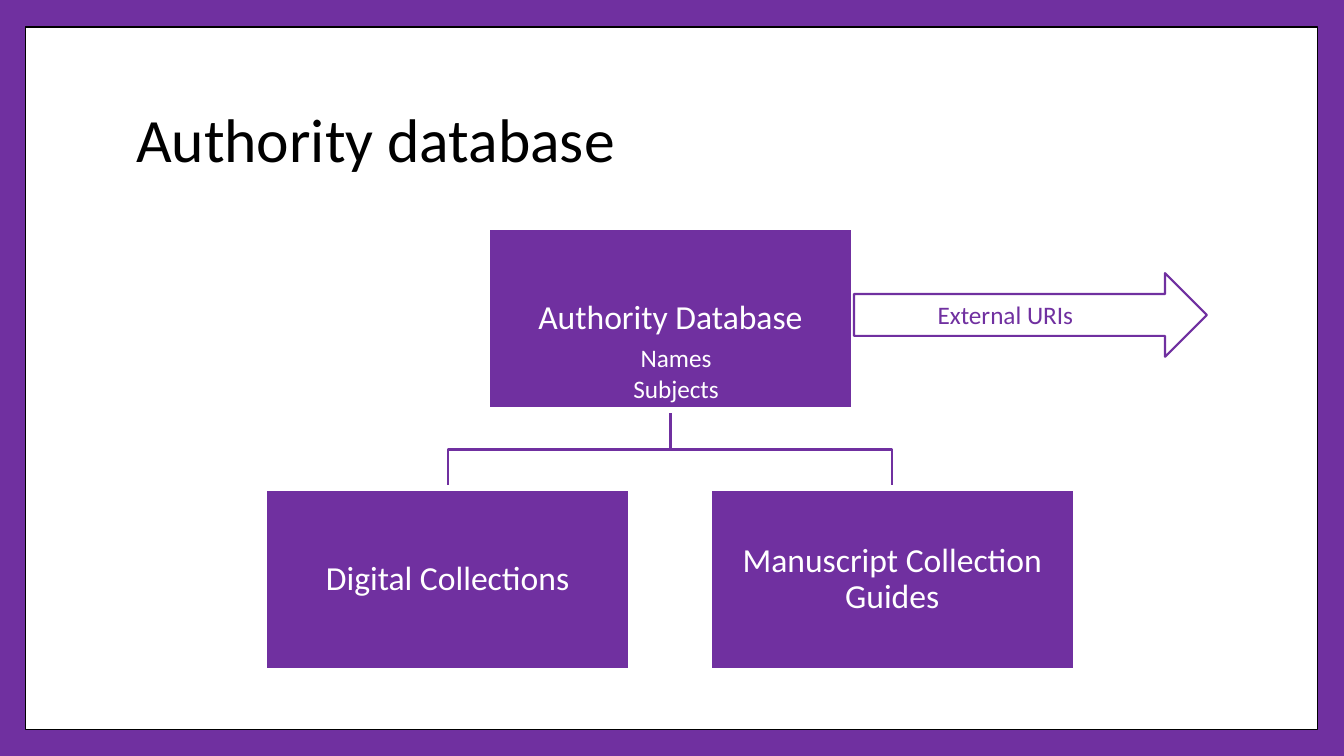
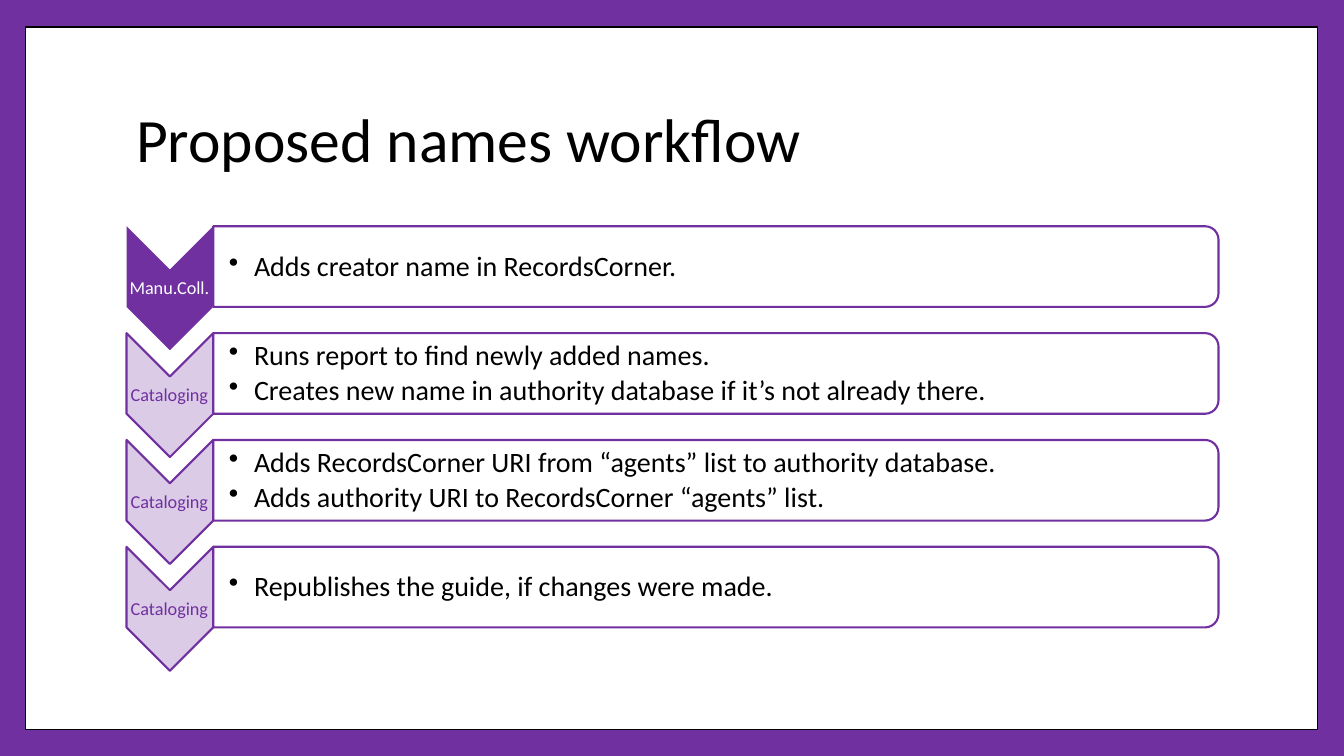
import pptx
import pptx.util
import pptx.dml.color
import pptx.enum.shapes
import pptx.enum.text
import pptx.oxml.ns
from lxml import etree

Inches = pptx.util.Inches
Pt = pptx.util.Pt
Shape = pptx.enum.shapes.MSO_SHAPE
Align = pptx.enum.text.PP_ALIGN
Anchor = pptx.enum.text.MSO_ANCHOR
qn = pptx.oxml.ns.qn

HUES = {"purple": "7030A0", "white": "FFFFFF", "black": "000000"}


def rgb(name):
    return pptx.dml.color.RGBColor.from_string(HUES[name])


class Deck:
    face = "Calibri"

    def __init__(self):
        self.prs = pptx.Presentation()
        self.prs.slide_width = Inches(13.33)
        self.prs.slide_height = Inches(7.5)
        self.slide = None
        back = self.prs.slide_master.background.fill
        back.solid()
        back.fore_color.rgb = rgb("purple")

    def start(self, title):
        first = self.slide is None
        self.slide = self.prs.slides.add_slide(self.prs.slide_layouts[5])
        if first:
            frame = self.shape(Shape.RECTANGLE, (0.25, 0.27, 12.82, 6.97), "white", "black", 1)
            self.prs.slide_master.element.cSld.spTree.insert(2, frame.element)
        head = self.slide.shapes.title
        head.left, head.top, head.width, head.height = map(Inches, (1.25, 0.67, 10.8, 1.48))
        self.label(head, [title], 44, "black", Align.LEFT)
        head.text_frame.auto_size = pptx.enum.text.MSO_AUTO_SIZE.NONE

    def label(self, item, lines, size, hue, align=Align.CENTER, space=0.9,
              inset=None, anchor=Anchor.MIDDLE):
        frame = item.text_frame
        frame.word_wrap = True
        frame.vertical_anchor = anchor
        if inset is not None:
            frame.margin_left = frame.margin_right = Inches(inset)
            frame.margin_top = frame.margin_bottom = Inches(inset)
        frame.text = "\n".join(lines)
        for para in frame.paragraphs:
            para.alignment = align
            para.line_spacing = space
            para.font.name = self.face
            para.font.size = Pt(size)
            para.font.color.rgb = rgb(hue)

    def shape(self, kind, box, fill=None, line=None, width=1.5, turn=0, alpha=100):
        item = self.slide.shapes.add_shape(kind, *map(Inches, box))
        item.shadow.inherit = False
        item.rotation = turn
        if fill:
            item.fill.solid()
            item.fill.fore_color.rgb = rgb(fill)
        else:
            item.fill.background()
        if alpha < 100:
            tint = item.element.spPr.find(qn("a:solidFill"))[0]
            etree.SubElement(tint, qn("a:alpha"), val=str(alpha * 1000))
        self.edge(item, line, width)
        return item

    def edge(self, item, hue, width):
        if hue:
            item.line.color.rgb = rgb(hue)
            item.line.width = Pt(width)
        else:
            item.line.fill.background()

    def text(self, box, lines, size, hue, **style):
        item = self.slide.shapes.add_textbox(*map(Inches, box))
        self.label(item, lines, size, hue, **style)
        return item

    def note(self, box, lines, hue, align):
        self.text(box, lines, 18, hue, align=align, space=1, anchor=Anchor.TOP)

    def node(self, x, y, name):
        item = self.shape(Shape.RECTANGLE, (x, y, 3.64, 1.82), "purple", "white", 4.25)
        self.label(item, [name], 24, "white", inset=0.02)

    def branch(self, points):
        spots = [(Inches(x), Inches(y)) for x, y in points]
        pen = self.slide.shapes.build_freeform(*spots[0])
        pen.add_line_segments(spots[1:], close=False)
        item = pen.convert_to_shape()
        item.shadow.inherit = False
        item.fill.background()
        self.edge(item, "purple", 1.5)

    def bullets(self, box, lines):
        item = self.text(box, lines, 20, "black", align=Align.LEFT, inset=0.01)
        item.text_frame.margin_left = Inches(0.16)
        for para in item.text_frame.paragraphs:
            para.space_after = Pt(3)
            props = para._p.get_or_add_pPr()
            props.set("marL", str(Inches(0.25)))
            props.set("indent", str(-Inches(0.25)))
            mark = etree.Element(qn("a:buChar"), char="•")
            props.find(qn("a:defRPr")).addprevious(mark)

    def step(self, mid, name, lines, strong):
        tip = mid + 0.21
        self.shape(Shape.CHEVRON, (1.07, tip - 0.43, 1.23, 0.86), "purple",
                   None if strong else "purple", turn=90, alpha=100 if strong else 25)
        self.text((1.25, tip - 0.18, 0.86, 0.37), [name], 13,
                  "white" if strong else "purple", inset=0.01)
        self.shape(Shape.ROUND_2_SAME_RECTANGLE, (6.7, mid - 4.99, 0.8, 9.97),
                   "white", "purple", turn=90, alpha=90)
        self.bullets((2.11, mid - 0.36, 9.94, 0.72), lines)


def main():
    deck = Deck()

    deck.start("Authority database")
    for x in (8.85, 4.44):
        deck.branch([(6.65, 4.08), (6.65, 4.46), (x, 4.46), (x, 4.84)])
    deck.node(4.83, 2.25, "Authority Database")
    deck.node(2.62, 4.84, "Digital Collections")
    deck.node(7.03, 4.84, "Manuscript Collection Guides")
    deck.shape(Shape.RIGHT_ARROW, (8.47, 2.71, 3.5, 0.83), None, "purple")
    deck.note((9.2, 2.92, 2.69, 0.4), ["External URIs"], "purple", Align.LEFT)
    deck.note((6.05, 3.35, 1.31, 0.71), ["Names", "Subjects"], "white", Align.CENTER)

    deck.start("Proposed names workflow")
    steps = [
        ("Manu.Coll.", ["Adds creator name in RecordsCorner."]),
        ("Cataloging", ["Runs report to find newly added names.",
                        "Creates new name in authority database if it’s not already there."]),
        ("Cataloging", ["Adds RecordsCorner URI from “agents” list to authority database.",
                        "Adds authority URI to RecordsCorner “agents” list."]),
        ("Cataloging", ["Republishes the guide, if changes were made."]),
    ]
    for rank, (name, lines) in enumerate(steps):
        deck.step(2.65 + 1.06 * rank, name, lines, rank == 0)

    deck.prs.save("out.pptx")


if __name__ == "__main__":
    main()
